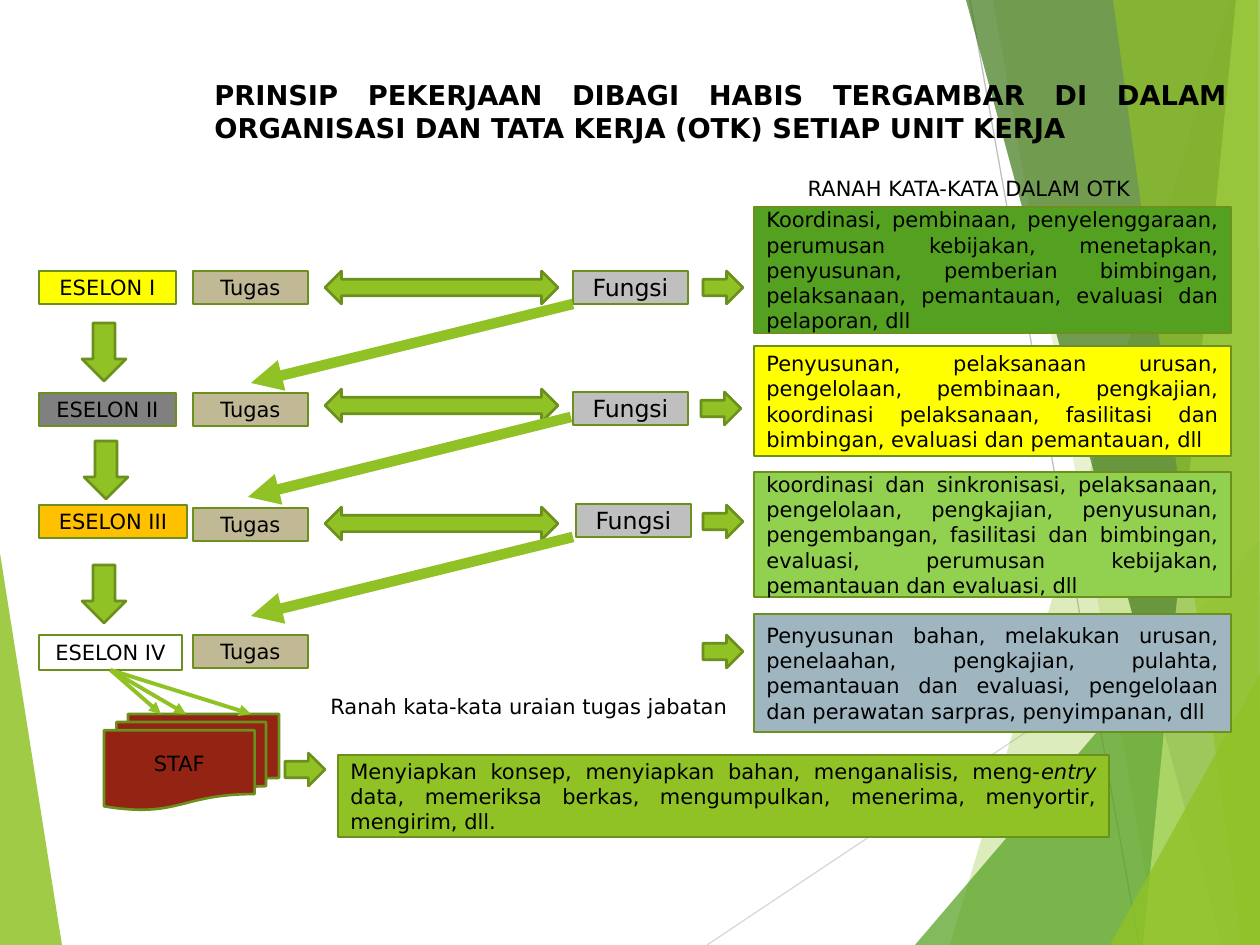
"""Build the slide on how work is divided across the echelons of an organisation."""
from lxml.etree import SubElement
from pptx import Presentation
from pptx.dml.color import RGBColor
from pptx.enum.shapes import MSO_CONNECTOR, MSO_SHAPE
from pptx.enum.text import MSO_ANCHOR, PP_ALIGN
from pptx.oxml.ns import qn
from pptx.util import Pt

PX = 914400 / 126
WIDTH, HEIGHT = 1260, 945
FONT = "DejaVu Sans"
COLORS = {
    "lime": "90C226", "green": "54A021", "forest": "3F7819", "pale": "C0E474",
    "outline": "6B901C", "black": "000000", "white": "FFFFFF", "yellow": "FFFF00",
    "grey": "808080", "silver": "BFBFBF", "light": "D9D9D9", "orange": "FFC000",
    "sand": "C1B995", "leaf": "92D050", "blue": "9FB6C0", "maroon": "932313",
}

BACKDROP_LEFT = [("lime", 85, [(0, 553), (62, 945), (0, 945)])]
BACKDROP_LINES = [("light", (707, 945), (1260, 576)), ("silver", (970, 0), (1139, 945))]
BACKDROP_RIGHT = [
    ("lime", 30, [(1229, 0), (950, 945), (1260, 945), (1260, 0)]),
    ("lime", 20, [(993, 0), (1158, 945), (1260, 945), (1260, 0)]),
    ("green", 72, [(915, 945), (1260, 541), (1260, 945)]),
    ("forest", 70, [(966, 0), (1222, 945), (1260, 945), (1260, 0)]),
    ("pale", 70, [(1236, 0), (1143, 945), (1260, 945), (1260, 0)]),
    ("lime", 65, [(1113, 0), (1242, 945), (1260, 945), (1258, 0)]),
    ("lime", 80, [(1110, 945), (1260, 674), (1260, 945)]),
]

TITLE = ("PRINSIP PEKERJAAN DIBAGI HABIS TERGAMBAR DI DALAM ORGANISASI "
         "DAN TATA KERJA (OTK) SETIAP UNIT KERJA")
DOMAIN_LABEL = "RANAH KATA-KATA DALAM OTK"
DUTY_LABEL = "Ranah kata-kata uraian tugas jabatan"
STAFF_DUTIES = [
    ("Menyiapkan konsep, menyiapkan bahan, menganalisis, meng-", False),
    ("entry", True),
    (" data, memeriksa berkas, mengumpulkan, menerima, menyortir, mengirim, dll.", False),
]
ECHELONS = [
    {"name": "ESELON I", "fill": "yellow", "box": (39, 271, 137, 33), "task": 271,
     "function": (573, 271), "double": 271, "arrow": (703, 271), "down": (82, 323),
     "diagonal": ((573, 304), (251, 383)), "panel": ("green", 207, 126),
     "words": "Koordinasi, pembinaan, penyelenggaraan, perumusan kebijakan, menetapkan, "
              "penyusunan, pemberian bimbingan, pelaksanaan, pemantauan, evaluasi dan "
              "pelaporan, dll"},
    {"name": "ESELON II", "fill": "grey", "box": (39, 393, 137, 33), "task": 393,
     "function": (573, 392), "double": 389, "arrow": (701, 392), "down": (84, 441),
     "diagonal": ((571, 417), (248, 497)), "panel": ("yellow", 346, 110),
     "words": "Penyusunan, pelaksanaan urusan, pengelolaan, pembinaan, pengkajian, "
              "koordinasi pelaksanaan, fasilitasi dan bimbingan, evaluasi dan "
              "pemantauan, dll"},
    {"name": "ESELON III", "fill": "orange", "box": (39, 505, 148, 33), "task": 508,
     "function": (576, 504), "double": 507, "arrow": (703, 505), "down": (82, 565),
     "diagonal": ((573, 537), (251, 616)), "panel": ("leaf", 472, 125),
     "words": "koordinasi dan sinkronisasi, pelaksanaan, pengelolaan, pengkajian, "
              "penyusunan, pengembangan, fasilitasi dan bimbingan, evaluasi, perumusan "
              "kebijakan, pemantauan dan evaluasi, dll"},
    {"name": "ESELON IV", "fill": "white", "box": (39, 635, 143, 35), "task": 635,
     "arrow": (703, 635), "panel": ("blue", 614, 118),
     "words": "Penyusunan bahan, melakukan urusan, penelaahan, pengkajian, pulahta, "
              "pemantauan dan evaluasi, pengelolaan dan perawatan sarpras, "
              "penyimpanan, dll"},
]
STAFF_ARROW_ENDS = [(251, 714), (186, 714), (161, 714)]


def emu(*lengths):
    return [round(length * PX) for length in lengths]


def color(name):
    return RGBColor.from_string(COLORS[name])


def write(shape, runs, align, size=12, bold=False, anchor=MSO_ANCHOR.MIDDLE):
    frame = shape.text_frame
    frame.word_wrap = True
    frame.vertical_anchor = anchor
    paragraph = frame.paragraphs[0]
    paragraph.alignment = align
    for text, italic in runs:
        run = paragraph.add_run()
        run.text = text
        font = run.font
        font.name, font.size, font.bold, font.italic = FONT, Pt(size), bold, italic
        font.color.rgb = color("black")


def add_box(slide, kind, box, fill, runs=(), align=PP_ALIGN.CENTER, size=12):
    shape = slide.shapes.add_shape(kind, *emu(*box))
    shape.shadow.inherit = False
    shape.fill.solid()
    shape.fill.fore_color.rgb = color(fill)
    shape.line.color.rgb = color("outline")
    shape.line.width = Pt(1.5)
    if runs:
        write(shape, runs, align, size)
    return shape


def add_label(slide, box, text, align, **style):
    label = slide.shapes.add_textbox(*emu(*box))
    write(label, [(text, False)], align, anchor=MSO_ANCHOR.TOP, **style)


def add_line(slide, start, end, line_color, width, arrow=True):
    connector = slide.shapes.add_connector(MSO_CONNECTOR.STRAIGHT, *emu(*start, *end))
    connector.line.color.rgb = color(line_color)
    connector.line.width = Pt(width)
    if arrow:
        SubElement(connector.line._get_or_add_ln(), qn("a:tailEnd"), type="triangle")
    SubElement(connector._element.spPr, qn("a:effectLst"))
    return connector


def add_facets(slide, facets):
    for fill, opacity, points in facets:
        builder = slide.shapes.build_freeform(*points[0], scale=PX)
        builder.add_line_segments(points[1:], close=True)
        facet = builder.convert_to_shape()
        facet.shadow.inherit = False
        facet.fill.solid()
        facet.fill.fore_color.rgb = color(fill)
        facet.line.fill.background()
        tint = facet._element.spPr.find(qn("a:solidFill"))[0]
        SubElement(tint, qn("a:alpha"), val=str(opacity * 1000))


def add_echelon(slide, echelon):
    box = add_box(slide, MSO_SHAPE.RECTANGLE, echelon["box"], echelon["fill"],
                  [(echelon["name"], False)])
    add_box(slide, MSO_SHAPE.RECTANGLE, (193, echelon["task"], 115, 33), "sand",
            [("Tugas", False)])
    add_box(slide, MSO_SHAPE.RIGHT_ARROW, (*echelon["arrow"], 40, 33), "lime")
    fill, top, height = echelon["panel"]
    add_box(slide, MSO_SHAPE.RECTANGLE, (754, top, 477, height), fill,
            [(echelon["words"], False)], PP_ALIGN.JUSTIFY)
    if "function" in echelon:
        add_box(slide, MSO_SHAPE.RECTANGLE, (*echelon["function"], 115, 33), "silver",
                [("Fungsi", False)], size=13.5)
        add_box(slide, MSO_SHAPE.LEFT_RIGHT_ARROW, (325, echelon["double"], 233, 33), "lime")
        add_box(slide, MSO_SHAPE.DOWN_ARROW, (*echelon["down"], 44, 58), "lime")
        add_line(slide, *echelon["diagonal"], "lime", 6)
    return box


def add_staff(slide, parent):
    staff = add_box(slide, MSO_SHAPE.FLOWCHART_MULTIDOCUMENT, (104, 714, 175, 96),
                    "maroon", [("STAF", False)])
    staff.text_frame.margin_bottom = emu(16)[0]
    for end in STAFF_ARROW_ENDS:
        add_line(slide, (110, 670), end, "lime", 2.25).begin_connect(parent, 2)
    add_box(slide, MSO_SHAPE.RIGHT_ARROW, (285, 753, 40, 33), "lime")
    add_box(slide, MSO_SHAPE.RECTANGLE, (338, 755, 771, 82), "lime",
            STAFF_DUTIES, PP_ALIGN.JUSTIFY)


def main():
    presentation = Presentation()
    presentation.slide_width, presentation.slide_height = emu(WIDTH, HEIGHT)
    slide = presentation.slides.add_slide(presentation.slide_layouts[6])
    add_facets(slide, BACKDROP_LEFT)
    for line_color, start, end in BACKDROP_LINES:
        add_line(slide, start, end, line_color, 0.75, arrow=False)
    add_facets(slide, BACKDROP_RIGHT)
    boxes = [add_echelon(slide, echelon) for echelon in ECHELONS]
    add_staff(slide, boxes[-1])
    add_label(slide, (754, 169, 430, 38), DOMAIN_LABEL, PP_ALIGN.CENTER)
    add_label(slide, (318, 687, 432, 38), DUTY_LABEL, PP_ALIGN.LEFT)
    add_label(slide, (202, 72, 1038, 86), TITLE, PP_ALIGN.JUSTIFY, size=15.6, bold=True)
    presentation.save("out.pptx")


if __name__ == "__main__":
    main()
